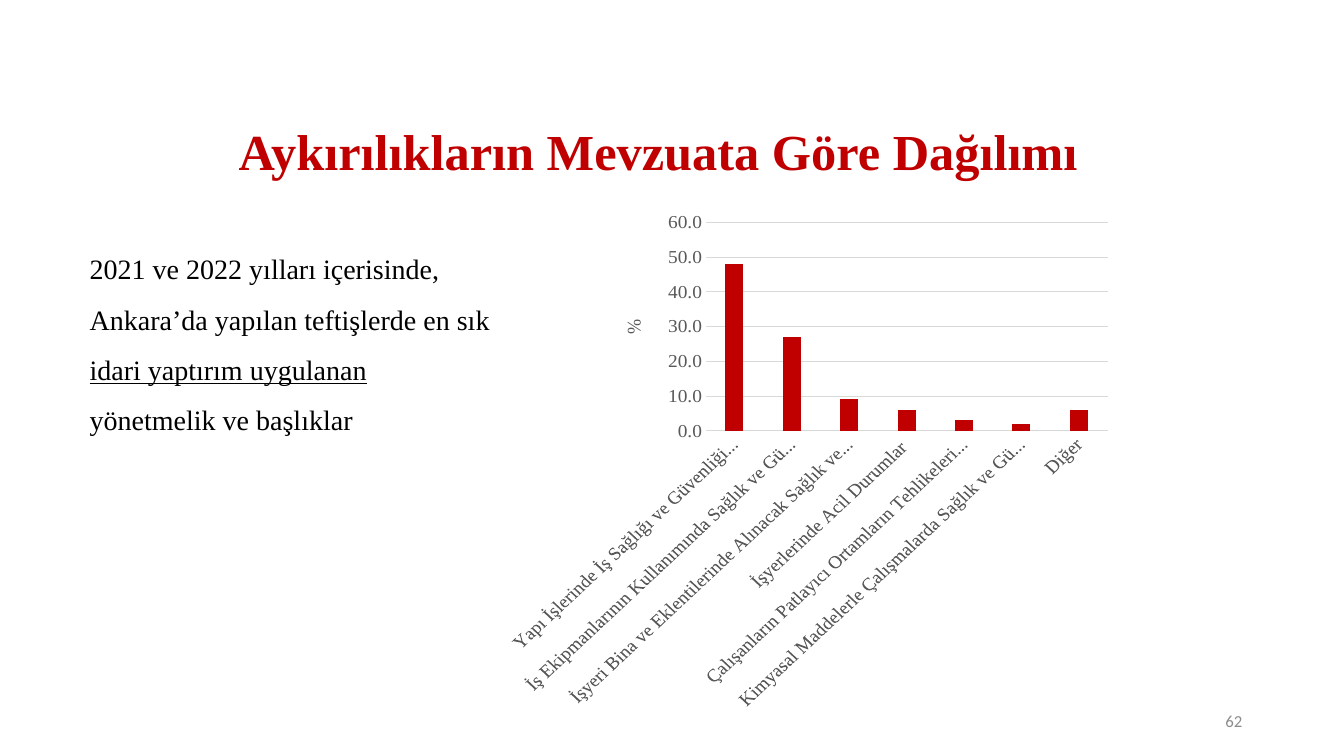
from dataclasses import dataclass

from lxml import etree
from pptx import Presentation
from pptx.chart.data import CategoryChartData
from pptx.dml.color import RGBColor
from pptx.enum.chart import XL_CHART_TYPE, XL_TICK_MARK
from pptx.enum.text import MSO_ANCHOR, PP_ALIGN
from pptx.oxml import parse_xml
from pptx.oxml.ns import nsdecls
from pptx.util import Inches, Pt

RED = RGBColor(0xC0, 0x00, 0x00)
BLACK = RGBColor(0x00, 0x00, 0x00)
AXIS_GRAY = RGBColor(0x59, 0x59, 0x59)
GRID_GRAY = RGBColor(0xD9, 0xD9, 0xD9)
NUMBER_GRAY = RGBColor(0x8C, 0x8C, 0x8C)
SERIF = "Times New Roman"
TOP, MIDDLE = MSO_ANCHOR.TOP, MSO_ANCHOR.MIDDLE
LEFT, CENTER, RIGHT = PP_ALIGN.LEFT, PP_ALIGN.CENTER, PP_ALIGN.RIGHT
COLUMNS = XL_CHART_TYPE.COLUMN_CLUSTERED
NO_TICK = XL_TICK_MARK.NONE

TITLE_FONT = {"name": SERIF, "size": Pt(36), "bold": True}
BODY_FONT = {"name": SERIF, "size": Pt(20)}
NUMBER_FONT = {"name": "Calibri", "size": Pt(12)}
CHART_FONT = {"name": SERIF, "size": Pt(15), "bold": False}

SHARES = {
    "Yapı İşlerinde İş Sağlığı ve Güvenliği Yönetmeliği": 48,
    "İş Ekipmanlarının Kullanımında Sağlık ve Güvenlik Şartları Yönetmeliği": 27,
    "İşyeri Bina ve Eklentilerinde Alınacak Sağlık ve Güvenlik Önlemlerine "
    "İlişkin Yönetmelik": 9,
    "İşyerlerinde Acil Durumlar ": 6,
    "Çalışanların Patlayıcı Ortamların Tehlikelerinden Korunması Hakkında "
    "Yönetmelik": 3,
    "Kimyasal Maddelerle Çalışmalarda Sağlık ve Güvenlik Önlemleri Hakkında "
    "Yönetmelik": 2,
    "Diğer": 6,
}


@dataclass
class TextBlock:
    at: tuple[float, float, float, float]
    runs: list[tuple[str, bool]]  # text, underlined
    font: dict
    color: RGBColor
    align: PP_ALIGN
    anchor: MSO_ANCHOR
    spacing: float = 1.0
    margin_top: float = 0.05


def format_font(font, values: dict, color: RGBColor) -> None:
    for name, value in values.items():
        setattr(font, name, value)
    font.color.rgb = color


def fill_text(sp, block: TextBlock) -> None:
    sp.left, sp.top, sp.width, sp.height = map(Inches, block.at)
    tf = sp.text_frame
    tf.word_wrap = True
    tf.vertical_anchor = block.anchor
    tf.margin_top = Inches(block.margin_top)
    p = tf.paragraphs[0]
    p.alignment = block.align
    p.line_spacing = block.spacing
    for text, underlined in block.runs:
        r = p.add_run()
        r.text = text
        format_font(r.font, block.font, block.color)
        if underlined:
            r.font.underline = True


def format_axis(axis) -> None:
    axis.major_tick_mark = axis.minor_tick_mark = NO_TICK
    format_font(axis.tick_labels.font, CHART_FONT, AXIS_GRAY)


def rotate_text(body, angle: int) -> None:
    body.set("rot", str(angle * 60000))
    body.set("vert", "horz")


def set_layout(parent, values: dict[str, float], inner: bool = False) -> None:
    for old in parent.findall("{*}layout"):
        parent.remove(old)
    layout = parse_xml(f"<c:layout {nsdecls('c')}><c:manualLayout/></c:layout>")
    manual = layout[0]
    settings = {"layoutTarget": "inner"} if inner else {}
    settings |= {"xMode": "edge", "yMode": "edge"} | values
    for name, value in settings.items():
        tag = manual.tag.replace("manualLayout", name)
        etree.SubElement(manual, tag).set("val", str(value))
    text = parent.find("{*}tx")
    parent.insert(0 if text is None else parent.index(text) + 1, layout)


def add_share_chart(slide) -> None:
    data = CategoryChartData(number_format="0.0")
    data.categories = list(SHARES)
    data.add_series("Series 1", list(SHARES.values()))
    at = map(Inches, (5.04, 2.06, 6.08, 4.98))
    chart = slide.shapes.add_chart(COLUMNS, *at, data).chart
    chart.has_legend = False
    chart.has_title = False
    format_font(chart.font, CHART_FONT, BLACK)

    # Columns
    plot = chart.plots[0]
    plot.gap_width, plot.overlap = 219, -27
    plot.vary_by_categories = False
    fill = plot.series[0].format.fill
    fill.solid()
    fill.fore_color.rgb = RED

    # Axes
    cat_axis, val_axis = chart.category_axis, chart.value_axis
    format_axis(cat_axis)
    format_axis(val_axis)
    val_axis.minimum_scale, val_axis.maximum_scale = 0, 60
    val_axis.major_unit = 10
    val_axis.tick_labels.number_format = "0.0"
    val_axis.tick_labels.number_format_is_linked = False
    val_axis.format.line.fill.background()
    for line in (cat_axis.format.line, val_axis.major_gridlines.format.line):
        line.color.rgb = GRID_GRAY
        line.width = Pt(0.75)
    rotate_text(cat_axis._element.find(".//{*}txPr/{*}bodyPr"), -45)

    # Axis title, left of the value labels
    axis_title = val_axis.axis_title
    p = axis_title.text_frame.paragraphs[0]
    r = p.add_run()
    r.text = "%"
    for font in (p.font, r.font):
        format_font(font, CHART_FONT, AXIS_GRAY)
    rotate_text(axis_title._element.find(".//{*}bodyPr"), -90)
    set_layout(axis_title._element, {"x": 0.11, "y": 0.25})

    # Plot area
    inner = {"x": 0.266, "y": 0.034, "w": 0.71, "h": 0.481}
    set_layout(chart._chartSpace.chart.plotArea, inner, inner=True)


def main() -> None:
    prs = Presentation()
    prs.slide_width, prs.slide_height = Inches(13.33), Inches(7.5)
    s = prs.slides.add_slide(prs.slide_layouts[5])

    # Title
    title = TextBlock((1.94, 0.99, 9.18, 1.07),
                      [("Aykırılıkların Mevzuata Göre Dağılımı", False)],
                      TITLE_FONT, RED, CENTER, MIDDLE, 0.9)
    fill_text(s.shapes.title, title)

    # Body text and slide number
    body = TextBlock((0.79, 1.37, 4.24, 4.97), [
        ("2021 ve 2022 yılları içerisinde, Ankara’da yapılan teftişlerde en sık ", False),
        ("idari yaptırım uygulanan", True),
        (" yönetmelik ve başlıklar", False),
    ], BODY_FONT, BLACK, LEFT, TOP, 1.5, 0.96)
    number = TextBlock((9.42, 6.95, 3, 0.4), [("62", False)],
                       NUMBER_FONT, NUMBER_GRAY, RIGHT, MIDDLE)
    for block in (body, number):
        fill_text(s.shapes.add_textbox(*map(Inches, block.at)), block)

    # Chart
    add_share_chart(s)
    prs.save("out.pptx")


if __name__ == "__main__":
    main()
